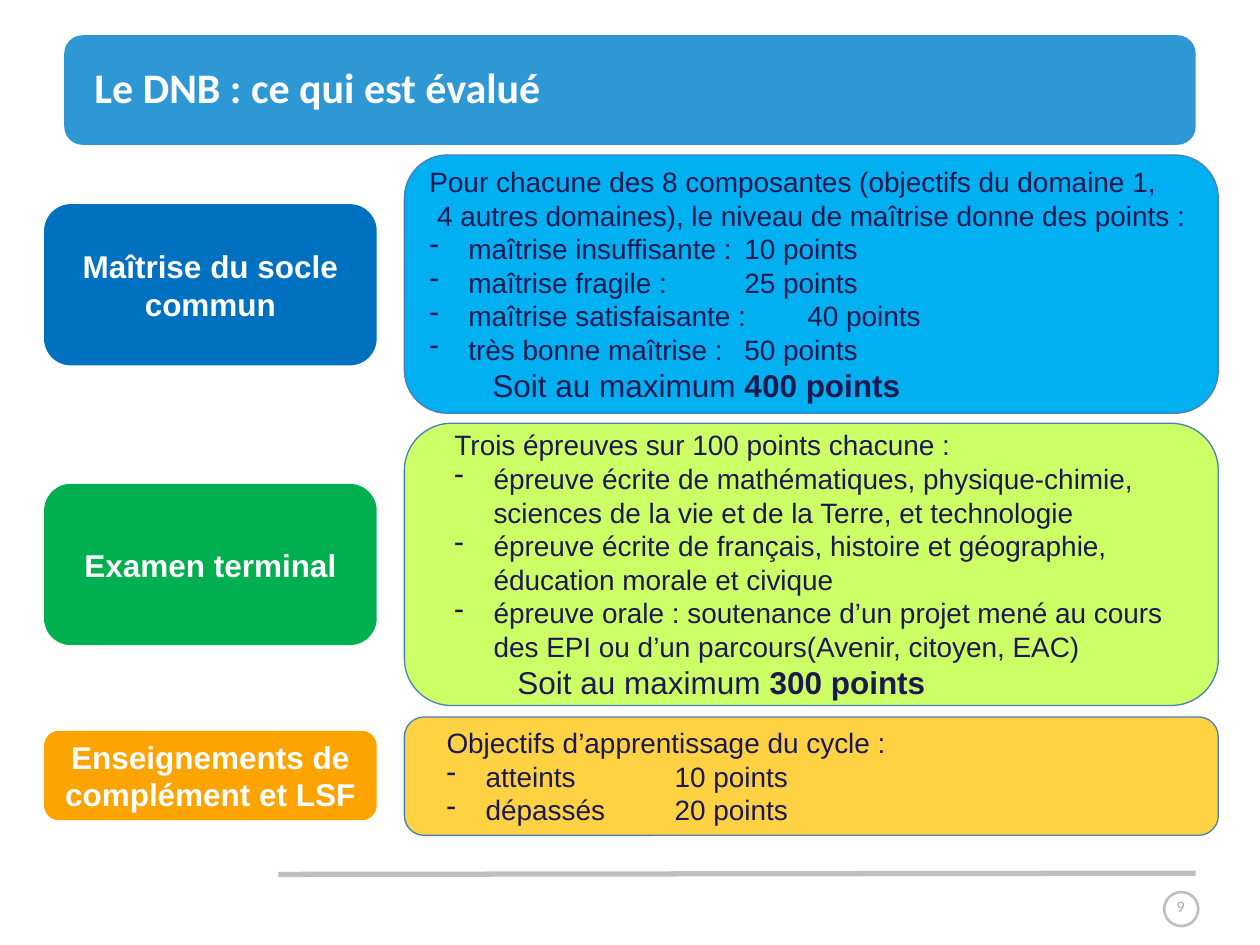
from lxml.etree import SubElement
from pptx import Presentation
from pptx.dml.color import RGBColor
from pptx.enum.shapes import MSO_CONNECTOR, MSO_SHAPE
from pptx.enum.text import MSO_ANCHOR, PP_ALIGN
from pptx.oxml.ns import qn
from pptx.util import Inches, Pt

HEX = {
    "banner": "2E98D5", "white": "FFFFFF", "ink": "1C1850", "edge": "4B7EBC",
    "rule": "BFBFBF", "number": "A6A6A6",
    "blue": "0070C0", "sky": "00B0F0", "green": "00B050", "lime": "CCFF66",
    "orange": "FDA403", "gold": "FFD243",
}
HANG = 0.31

# label, label colour, label top and height, panel colour, panel top and height,
# text indent, intro lines, bullets, total
ROWS = [
    ("Maîtrise du socle commun", "blue", 1.62, 1.28, "sky", 1.23, 2.05, 0,
     ["Pour chacune des 8 composantes (objectifs du domaine 1,",
      " 4 autres domaines), le niveau de maîtrise donne des points :"],
     ["maîtrise insuffisante : \t10 points",
      "maîtrise fragile : \t\t25 points",
      "maîtrise satisfaisante : \t40 points",
      "très bonne maîtrise : \t50 points"],
     "400 points"),
    ("Examen terminal", "green", 3.84, 1.28, "lime", 3.36, 2.24, 0.19,
     ["Trois épreuves sur 100 points chacune :"],
     ["épreuve écrite de mathématiques, physique-chimie, "
      "sciences de la vie et de la Terre, et technologie",
      "épreuve écrite de français, histoire et géographie, "
      "éducation morale et civique",
      "épreuve orale : soutenance d’un projet mené au cours "
      "des EPI ou d’un parcours(Avenir, citoyen, EAC)"],
     "300 points"),
    ("Enseignements de complément et LSF", "orange", 5.8, 0.71,
     "gold", 5.69, 0.94, 0.19,
     ["Objectifs d’apprentissage du cycle :"],
     ["atteints\t\t10 points", "dépassés\t\t20 points"],
     None),
]


def color(name):
    return RGBColor.from_string(HEX[name])


def style(para, size, ink, face="Arial", bold=False):
    font = para.font
    font.name, font.size, font.bold = face, Pt(size), bold
    font.color.rgb = color(ink)


def add_form(slide, kind, box, fill=None, edge=None, width=0.75):
    form = slide.shapes.add_shape(kind, *map(Inches, box))
    form.shadow.inherit = False
    if fill:
        form.fill.solid()
        form.fill.fore_color.rgb = color(fill)
    else:
        form.fill.background()
    if edge:
        form.line.color.rgb = color(edge)
        form.line.width = Pt(width)
    else:
        form.line.fill.background()
    frame = form.text_frame
    frame.word_wrap = True
    frame.vertical_anchor = MSO_ANCHOR.MIDDLE
    return frame


def add_text(slide, box, text, size, ink, bold=False, align=PP_ALIGN.LEFT):
    frame = slide.shapes.add_textbox(*map(Inches, box)).text_frame
    frame.word_wrap = True
    frame.vertical_anchor = MSO_ANCHOR.MIDDLE
    frame.margin_left = frame.margin_right = 0
    frame.margin_top = frame.margin_bottom = 0
    para = frame.paragraphs[0]
    para.text, para.alignment = text, align
    style(para, size, ink, "Calibri", bold)


def add_rule(slide, start, end):
    rule = slide.shapes.add_connector(
        MSO_CONNECTOR.STRAIGHT, *map(Inches, start + end))
    rule.line.color.rgb = color("rule")
    rule.line.width = Pt(3)
    SubElement(rule._element.spPr, qn("a:effectLst"))


def add_label(slide, text, fill, top, height):
    frame = add_form(slide, MSO_SHAPE.ROUNDED_RECTANGLE,
                     (0.35, top, 2.64, height), fill)
    para = frame.paragraphs[0]
    para.text, para.alignment = text, PP_ALIGN.CENTER
    style(para, 18, "white", bold=True)


def add_line(frame, text, indent, bullet=False):
    """Add a paragraph, using the empty first one if it is still free."""
    first = frame.paragraphs[0]
    para = first if not first.runs else frame.add_paragraph()
    para.alignment = PP_ALIGN.LEFT
    props = para._p.get_or_add_pPr()
    props.set("marL", str(Inches(indent + HANG if bullet else indent)))
    props.set("indent", str(Inches(-HANG if bullet else 0)))
    if bullet:
        SubElement(props, qn("a:buFontTx"))
        SubElement(props, qn("a:buChar"), char="-")
    para.add_run().text = text
    style(para, 16, "ink")
    return para


def add_panel(slide, fill, top, height, indent, intro, points, total):
    frame = add_form(slide, MSO_SHAPE.ROUNDED_RECTANGLE,
                     (3.21, top, 6.46, height), fill, "edge")
    for text in intro:
        add_line(frame, text, indent)
    for text in points:
        add_line(frame, text, indent, True)
    if total:
        para = add_line(frame, "\tSoit au maximum ", indent)
        para.font.size = Pt(18)
        run = para.add_run()
        run.text, run.font.bold = total, True


def main():
    deck = Presentation()
    deck.slide_width, deck.slide_height = Inches(10), Inches(7.5)
    slide = deck.slides.add_slide(deck.slide_layouts[6])

    add_form(slide, MSO_SHAPE.ROUNDED_RECTANGLE,
             (0.51, 0.28, 8.98, 0.87), "banner")
    add_text(slide, (9.01, 7.06, 0.72, 0.27), "9", 9, "number",
             align=PP_ALIGN.CENTER)
    add_rule(slide, (2.21, 6.94), (9.49, 6.93))
    add_form(slide, MSO_SHAPE.OVAL, (9.24, 7.08, 0.27, 0.27),
             edge="rule", width=1.5)
    add_text(slide, (0.75, 0.18, 8.74, 1.02), "Le DNB : ce qui est évalué",
             24, "white", True)
    for row in ROWS:
        add_label(slide, *row[:4])
        add_panel(slide, *row[4:])

    deck.save("out.pptx")


if __name__ == "__main__":
    main()
